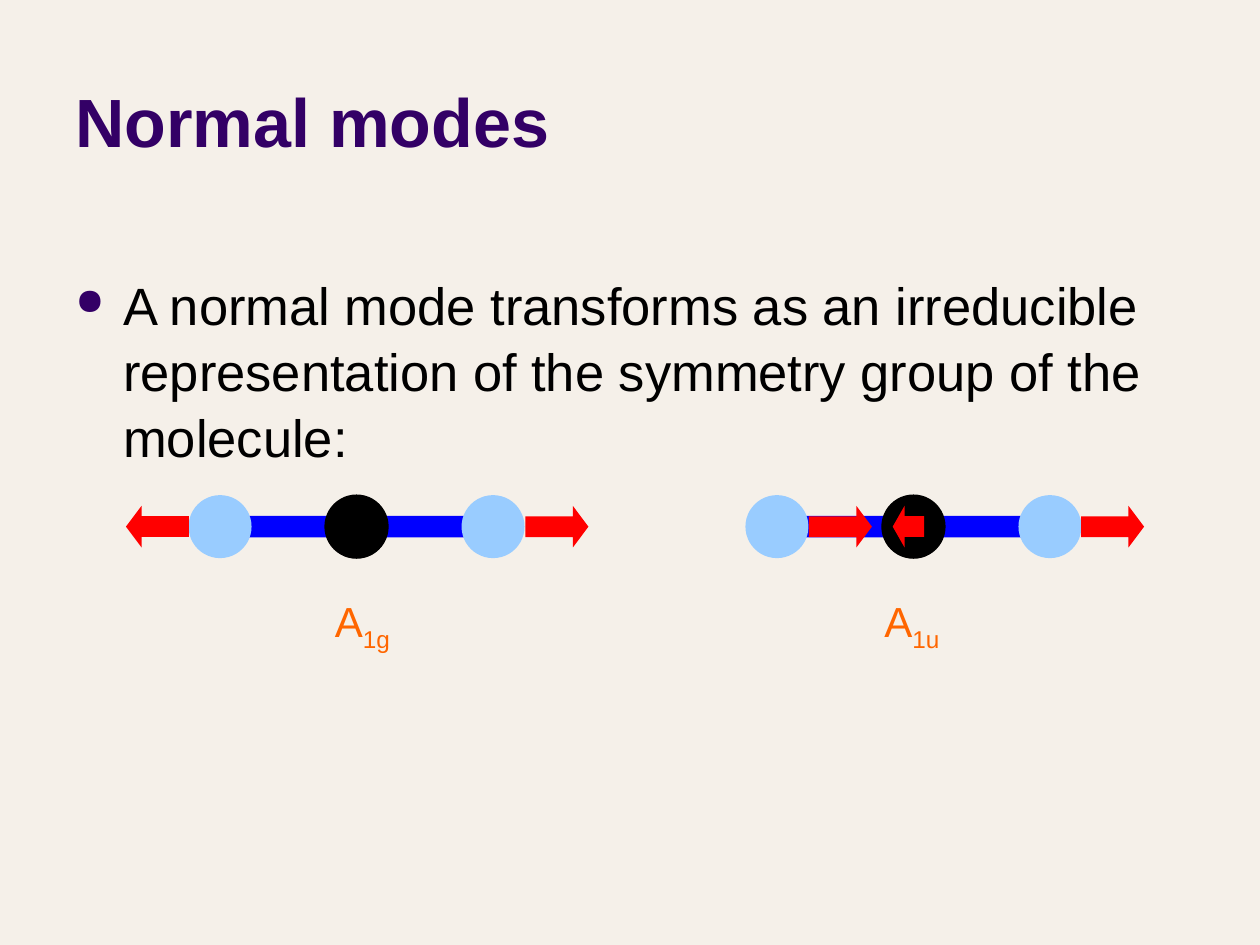
from lxml import etree
from pptx import Presentation
from pptx.dml.color import RGBColor
from pptx.enum.shapes import MSO_SHAPE as Shape
from pptx.enum.text import MSO_ANCHOR as Anchor
from pptx.oxml.ns import qn
from pptx.util import Inches, Pt

CREAM = RGBColor(0xF5, 0xF0, 0xE9)
PURPLE = RGBColor(0x33, 0x00, 0x66)
BLACK = RGBColor(0, 0, 0)
BLUE = RGBColor(0, 0, 0xFF)
LIGHT_BLUE = RGBColor(0x99, 0xCC, 0xFF)
RED = RGBColor(0xFF, 0, 0)
ORANGE = RGBColor(0xFF, 0x66, 0)

AXIS_Y = 4.18  # height of the molecular axis
ATOM = 0.5
BOND = 13 / 12  # distance between neighbouring atoms


def add_part(kind, center_x, width, height, color):
    """Add a filled shape centred on the molecular axis."""
    shape = slide.shapes.add_shape(
        kind, Inches(center_x - width / 2), Inches(AXIS_Y - height / 2),
        Inches(width), Inches(height))
    shape.shadow.inherit = False
    shape.fill.solid()
    shape.fill.fore_color.rgb = color
    shape.line.fill.background()
    return shape


def add_text(left, top, width, height, text, size, color):
    """Add a text box and return its frame and first paragraph."""
    box = slide.shapes.add_textbox(
        Inches(left), Inches(top), Inches(width), Inches(height))
    paragraph = box.text_frame.paragraphs[0]
    paragraph.add_run().text = text
    paragraph.font.name = "Arial"
    paragraph.font.size = Pt(size)
    paragraph.font.color.rgb = color
    return box.text_frame, paragraph


presentation = Presentation()
presentation.slide_width = Inches(10)
presentation.slide_height = Inches(7.5)
slide = presentation.slides.add_slide(presentation.slide_layouts[6])
slide.background.fill.solid()
slide.background.fill.fore_color.rgb = CREAM

# Title
frame, paragraph = add_text(0.5, 0.38, 9, 0.95, "Normal modes", 39, PURPLE)
frame.word_wrap = True
frame.vertical_anchor = Anchor.BOTTOM
paragraph.font.bold = True

# Bulleted statement
frame, paragraph = add_text(
    0.5, 2.09, 9, 4.82,
    "A normal mode transforms as an irreducible representation "
    "of the symmetry group of the molecule:", 30, BLACK)
frame.word_wrap = True
paragraph.line_spacing = 1.05
paragraph.space_before = Pt(6)
properties = paragraph._p.get_or_add_pPr()
properties.set("marL", str(Inches(0.38)))
properties.set("indent", str(Inches(-0.38)))
bullet_color = etree.Element(qn("a:buClr"))
etree.SubElement(bullet_color, qn("a:srgbClr"), val=str(PURPLE))
bullet_size = etree.Element(qn("a:buSzPct"), val="70000")
bullet = etree.Element(qn("a:buChar"), char="●")
position = properties.index(properties.find(qn("a:defRPr")))
properties[position:position] = [bullet_color, bullet_size, bullet]

# Molecules: centre, label position, subscript, arrows (centre, width, rotation)
modes = [
    (2.83, 2.56, "1g", [(1.25, 0.5, 0), (4.42, 0.5, 180)]),
    (7.25, 6.92, "1u", [(6.67, 0.5, 180), (7.21, 0.25, 0), (8.83, 0.5, 180)]),
]
for center, label_left, subscript, arrows in modes:
    add_part(Shape.RECTANGLE, center, 2 * BOND, 0.17, BLUE)
    for offset, color in [(-BOND, LIGHT_BLUE), (0, BLACK), (BOND, LIGHT_BLUE)]:
        atom = add_part(Shape.OVAL, center + offset, ATOM, ATOM, color)
        if color == BLACK:
            atom.line.color.rgb = BLACK
            atom.line.width = Pt(0.75)

    # Displacement arrows
    for arrow_x, width, rotation in arrows:
        arrow = add_part(Shape.LEFT_ARROW, arrow_x, width, 0.33, RED)
        arrow.adjustments[1] = 0.375
        arrow.rotation = rotation

    # Symmetry label
    frame, paragraph = add_text(label_left, 4.68, 0.69, 0.5, "A", 24, ORANGE)
    frame.word_wrap = False
    run = paragraph.add_run()
    run.text = subscript
    run.font._element.set("baseline", "-25000")

presentation.save("out.pptx")
